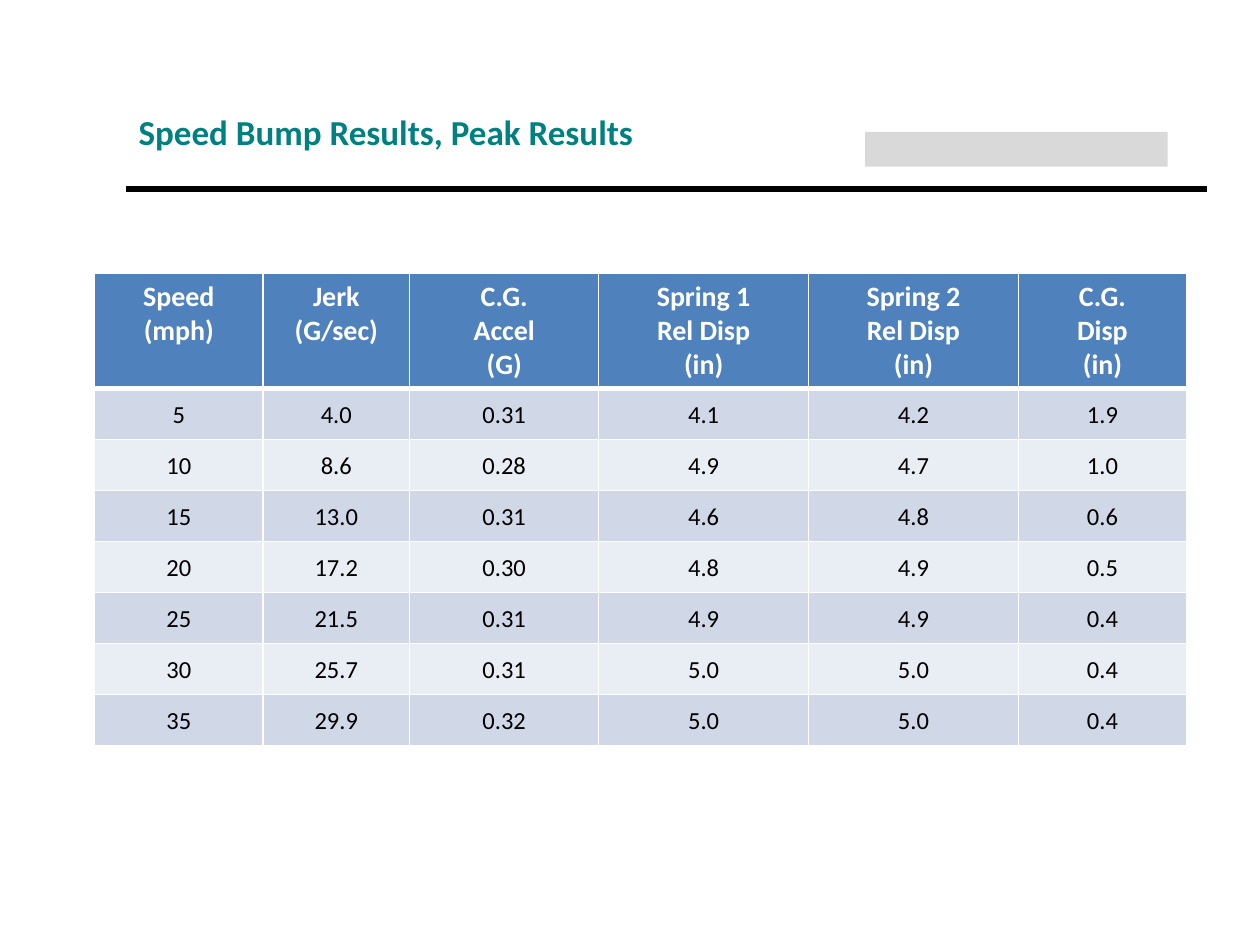
import pptx
import pptx.dml.color
import pptx.enum.shapes
import pptx.enum.text
import pptx.oxml
import pptx.oxml.ns
import pptx.util

Cm = pptx.util.Cm
Pt = pptx.util.Pt
ALIGN = pptx.enum.text.PP_ALIGN
ANCHOR = pptx.enum.text.MSO_ANCHOR

HEADERS = ["Speed\n(mph)", "Jerk\n(G/sec)", "C.G.\nAccel\n(G)",
           "Spring 1\nRel Disp\n(in)", "Spring 2\nRel Disp\n(in)", "C.G.\nDisp\n(in)"]
RESULTS = [
    ["5", "4.0", "0.31", "4.1", "4.2", "1.9"],
    ["10", "8.6", "0.28", "4.9", "4.7", "1.0"],
    ["15", "13.0", "0.31", "4.6", "4.8", "0.6"],
    ["20", "17.2", "0.30", "4.8", "4.9", "0.5"],
    ["25", "21.5", "0.31", "4.9", "4.9", "0.4"],
    ["30", "25.7", "0.31", "5.0", "5.0", "0.4"],
    ["35", "29.9", "0.32", "5.0", "5.0", "0.4"],
]
COLUMN_WIDTHS = [3.39, 2.96, 3.81, 4.23, 4.23, 3.39]


def rgb(value):
    """Return the colour for a hex string."""
    return pptx.dml.color.RGBColor.from_string(value)


def write(tf, text, size=14, color="000000", bold=False, font="Calibri", align=ALIGN.LEFT):
    """Fill a text frame with one paragraph per line and format it."""
    tf.text = text
    for p in tf.paragraphs:
        p.alignment = align
        for r in p.runs:
            r.font.name = font
            r.font.size = Pt(size)
            r.font.bold = bold
            r.font.color.rgb = rgb(color)


def set_borders(cell, top, bottom, color="FFFFFF"):
    """Draw the four borders of a cell, with top and bottom widths in points."""
    tcPr = cell._tc.get_or_add_tcPr()
    for side, width in (("L", 1), ("R", 1), ("T", top), ("B", bottom)):
        tcPr.append(pptx.oxml.parse_xml(
            f'<a:ln{side} {pptx.oxml.ns.nsdecls("a")} w="{Pt(width)}">'
            f'<a:solidFill><a:srgbClr val="{color}"/></a:solidFill></a:ln{side}>'))


def add_header(slide, left, top, width):
    """Place the title, a plain block at the right and the rule below them."""
    title = slide.shapes.title
    title.left, title.top = Cm(left), Cm(top)
    title.width, title.height = Cm(12.27), Cm(1.11)
    tf = title.text_frame
    tf.word_wrap = True
    tf.auto_size = pptx.enum.text.MSO_AUTO_SIZE.NONE
    tf.vertical_anchor = ANCHOR.TOP
    write(tf, "Speed Bump Results, Peak Results", size=20, color="008080", bold=True)

    block = slide.shapes.add_shape(pptx.enum.shapes.MSO_SHAPE.RECTANGLE,
                                   Cm(left + 14.9), Cm(top + 0.55), Cm(6.1), Cm(0.7))
    block.shadow.inherit = False
    block.fill.solid()
    block.fill.fore_color.rgb = rgb("D9D9D9")
    block.line.fill.background()

    rule_y = Cm(top + 1.7)
    rule = slide.shapes.add_connector(pptx.enum.shapes.MSO_CONNECTOR.STRAIGHT,
                                      Cm(left), rule_y, Cm(left + width), rule_y)
    rule.line.color.rgb = rgb("000000")
    rule.line.width = Pt(3)
    rule._element.spPr.append(
        pptx.oxml.parse_xml(f'<a:effectLst {pptx.oxml.ns.nsdecls("a")}/>'))


def add_results_table(slide, left, top, width, height, header_height=2.26):
    """Place the table of peak results with its header row and banded body."""
    rows = [HEADERS] + RESULTS
    table = slide.shapes.add_table(len(rows), len(HEADERS), Cm(left), Cm(top),
                                   Cm(width), Cm(height)).table
    table.horz_banding = False
    for column, column_width in zip(table.columns, COLUMN_WIDTHS):
        column.width = Cm(column_width)
    for i, values in enumerate(rows):
        is_header = i == 0
        table.rows[i].height = Cm(
            header_height if is_header else (height - header_height) / len(RESULTS))
        for cell, value in zip(table.rows[i].cells, values):
            set_borders(cell, top=3 if i == 1 else 1, bottom=3 if is_header else 1)
            cell.fill.solid()
            if is_header:
                cell.fill.fore_color.rgb = rgb("4F81BD")
                write(cell.text_frame, value, size=16, color="FFFFFF", bold=True,
                      align=ALIGN.CENTER)
            else:
                cell.fill.fore_color.rgb = rgb("D0D8E8" if i % 2 else "E9EDF4")
                cell.vertical_anchor = ANCHOR.MIDDLE
                cell.margin_left = cell.margin_right = cell.margin_top = Cm(0.03)
                cell.margin_bottom = 0
                write(cell.text_frame, value, align=ALIGN.CENTER)


def main():
    """Build the slide and save it."""
    prs = pptx.Presentation()
    prs.slide_width, prs.slide_height = Cm(25.4), Cm(19.05)
    slide = prs.slides.add_slide(prs.slide_layouts.get_by_name("Title Only"))
    add_header(slide, 2.54, 2.11, 21.8)
    add_results_table(slide, 1.91, 5.51, 22.01, 9.46)
    prs.save("out.pptx")


if __name__ == "__main__":
    main()
